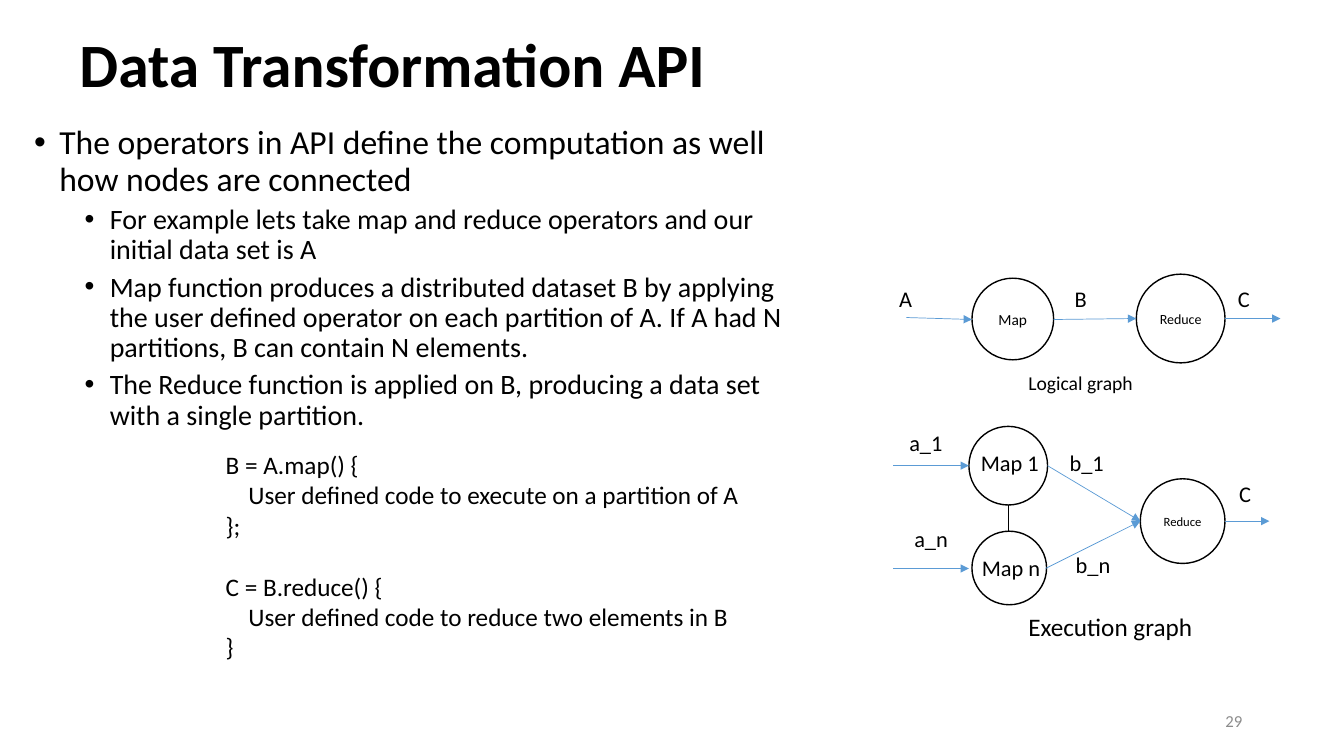
"""Build the Data Transformation API slide with its logical and execution graphs."""
from dataclasses import dataclass

from lxml import etree
from pptx import Presentation
from pptx.dml.color import RGBColor
from pptx.enum.shapes import MSO_CONNECTOR, MSO_SHAPE
from pptx.enum.text import MSO_ANCHOR, PP_ALIGN
from pptx.oxml.ns import qn
from pptx.util import Inches, Pt

OVAL = MSO_SHAPE.OVAL
STRAIGHT = MSO_CONNECTOR.STRAIGHT
TOP, MIDDLE = MSO_ANCHOR.TOP, MSO_ANCHOR.MIDDLE
LEFT, CENTER, RIGHT = PP_ALIGN.LEFT, PP_ALIGN.CENTER, PP_ALIGN.RIGHT


@dataclass(frozen=True)
class Theme:
    font: str = "Calibri"
    ink: RGBColor = RGBColor(0, 0, 0)
    paper: RGBColor = RGBColor(255, 255, 255)
    arrow: RGBColor = RGBColor(0x5B, 0x9B, 0xD5)
    muted: RGBColor = RGBColor(0x8C, 0x8C, 0x8C)
    title: int = 44
    bullet: int = 24
    sub_bullet: int = 20
    code: int = 18
    label: int = 16
    caption: int = 14
    number: int = 12


theme = Theme()


def add_run(p, text, size, color=theme.ink, bold=False):
    r = p.add_run()
    r.text = text
    r.font.name = theme.font
    r.font.size = Pt(size)
    r.font.color.rgb = color
    r.font.bold = bold


def add_box(box, anchor=TOP, wrap=True):
    tf = s.shapes.add_textbox(*map(Inches, box)).text_frame
    tf.word_wrap = wrap
    tf.vertical_anchor = anchor
    return tf


prs = Presentation()
prs.slide_width, prs.slide_height = Inches(13.33), Inches(7.5)
s = prs.slides.add_slide(prs.slide_layouts[6])

p = add_box((0.69, -0.06, 11.5, 1.45), MIDDLE).paragraphs[0]
p.line_spacing = 0.9
add_run(p, "Data Transformation API", theme.title, bold=True)

bullets = [
    (0, "The operators in API define the computation as well how nodes are connected"),
    (1, "For example lets take map and reduce operators and our initial data set is A"),
    (1, "Map function produces a distributed dataset B by applying the user defined "
        "operator on each partition of A. If A had N partitions, B can contain N elements."),
    (1, "The Reduce function is applied on B, producing a data set with a single partition."),
]
tf = add_box((0.24, 1.2, 7.65, 4.76))
for i, (level, text) in enumerate(bullets):
    p = tf.add_paragraph() if i else tf.paragraphs[0]
    p.level = level
    p.line_spacing = 0.9
    if i:
        p.space_before = Pt(5)
    pPr = p._p.get_or_add_pPr()
    pPr.set("marL", str(Inches(0.25 + 0.5 * level)))
    pPr.set("indent", str(Inches(-0.25)))
    etree.SubElement(pPr, qn("a:buFont")).set("typeface", "Arial")
    etree.SubElement(pPr, qn("a:buChar")).set("char", "•")
    add_run(p, text, theme.sub_bullet if level else theme.bullet)

code = [
    "B = A.map() {",
    "    User defined code to execute on a partition of A",
    "};",
    "C = B.reduce() {",
    "    User defined code to reduce two elements in B",
    "}",
]
tf = add_box((2.14, 4.41, 5.99, 2.22))
for i, line in enumerate(code):
    p = tf.add_paragraph() if i else tf.paragraphs[0]
    if line.startswith("C ="):
        p.space_before = Pt(22)
    add_run(p, line, theme.code)

nodes = [
    (9.64, 2.76, 0.81, 0.81, "Map", 11),
    (11.27, 2.72, 0.88, 0.88, "Reduce", 10),
    (9.61, 4.23, 0.78, 0.78, "", 0),
    (9.64, 5.27, 0.74, 0.73, "", 0),
    (11.31, 4.75, 0.84, 0.84, "Reduce", 9),
]
for *box, name, size in nodes:
    sp = s.shapes.add_shape(OVAL, *map(Inches, box))
    sp.shadow.inherit = False
    sp.fill.solid()
    sp.fill.fore_color.rgb = theme.paper
    sp.line.color.rgb = theme.ink
    sp.line.width = Pt(1)
    if name:
        tf = sp.text_frame
        tf.word_wrap = False
        tf.vertical_anchor = MIDDLE
        tf.paragraphs[0].alignment = CENTER
        add_run(tf.paragraphs[0], name, size)

edges = [
    (8.99, 3.15, 9.64, 3.17, True),
    (10.45, 3.17, 11.27, 3.16, True),
    (12.15, 3.16, 12.7, 3.16, True),
    (8.86, 4.62, 9.61, 4.62, True),
    (8.86, 5.64, 9.61, 5.64, True),
    (10.39, 4.62, 11.31, 5.17, True),
    (10.37, 5.64, 11.31, 5.17, True),
    (12.15, 5.17, 12.59, 5.17, True),
    (10, 5.01, 10, 5.27, False),
]
for *ends, directed in edges:
    cx = s.shapes.add_connector(STRAIGHT, *map(Inches, ends))
    cx.line.color.rgb = theme.arrow if directed else theme.ink
    cx.line.width = Pt(0.5)
    if directed:
        etree.SubElement(cx.line._get_or_add_ln(), qn("a:tailEnd")).set("type", "triangle")
    etree.SubElement(cx._element.spPr, qn("a:effectLst"))

labels = [
    (8.82, 2.78, 0.33, "A", theme.label),
    (10.56, 2.78, 0.32, "B", theme.label),
    (12.18, 2.78, 0.32, "C", theme.label),
    (10.1, 3.63, 1.25, "Logical graph", theme.caption),
    (8.92, 4.21, 0.54, "a_1", theme.label),
    (8.97, 5.16, 0.54, "a_n", theme.label),
    (9.63, 4.41, 0.78, "Map 1", theme.label),
    (9.64, 5.45, 0.79, "Map n", theme.label),
    (10.51, 4.41, 0.55, "b_1", theme.label),
    (10.57, 5.42, 0.55, "b_n", theme.label),
    (12.19, 4.71, 0.32, "C", theme.label),
    (10.1, 6.02, 1.85, "Execution graph", theme.code),
]
for x, y, w, text, size in labels:
    p = add_box((x, y, w, 0.37), wrap=False).paragraphs[0]
    p.alignment = LEFT
    add_run(p, text, size)

p = add_box((9.42, 6.95, 3, 0.4), MIDDLE).paragraphs[0]
p.alignment = RIGHT
add_run(p, "29", theme.number, theme.muted)

prs.save("out.pptx")
